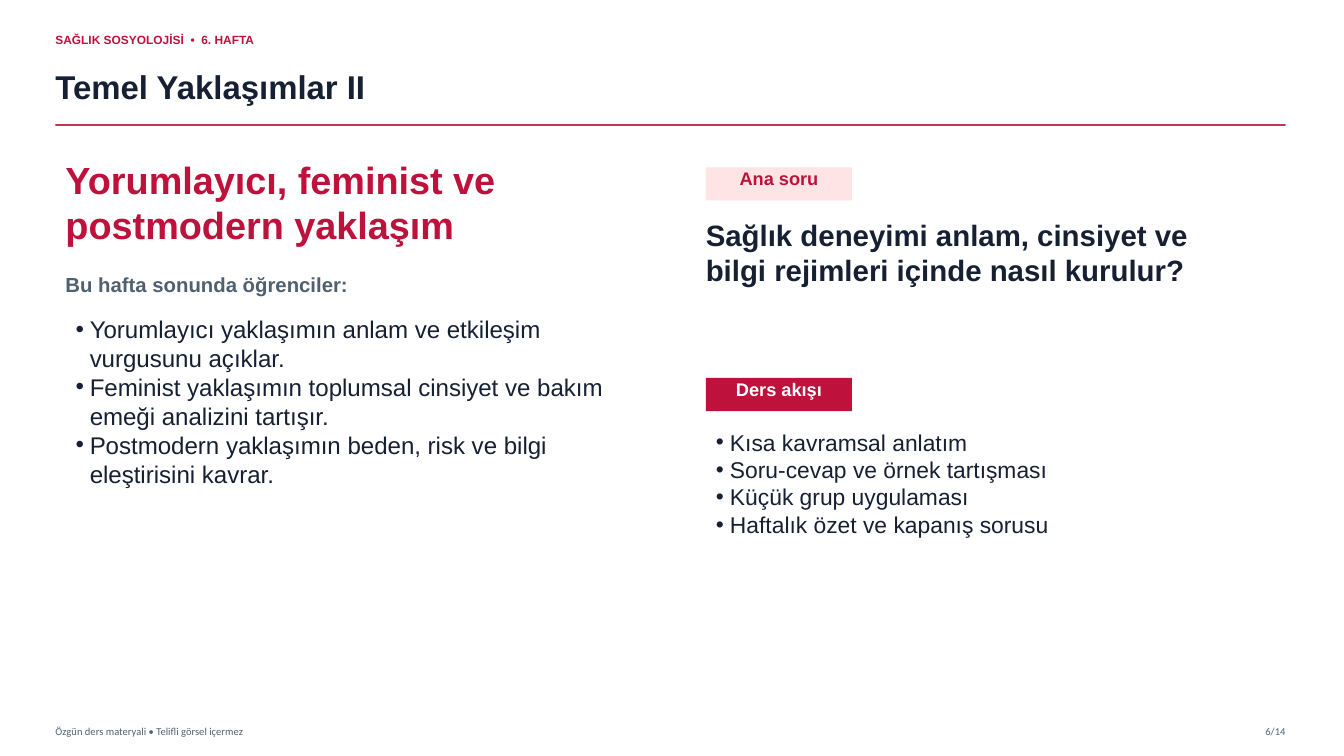
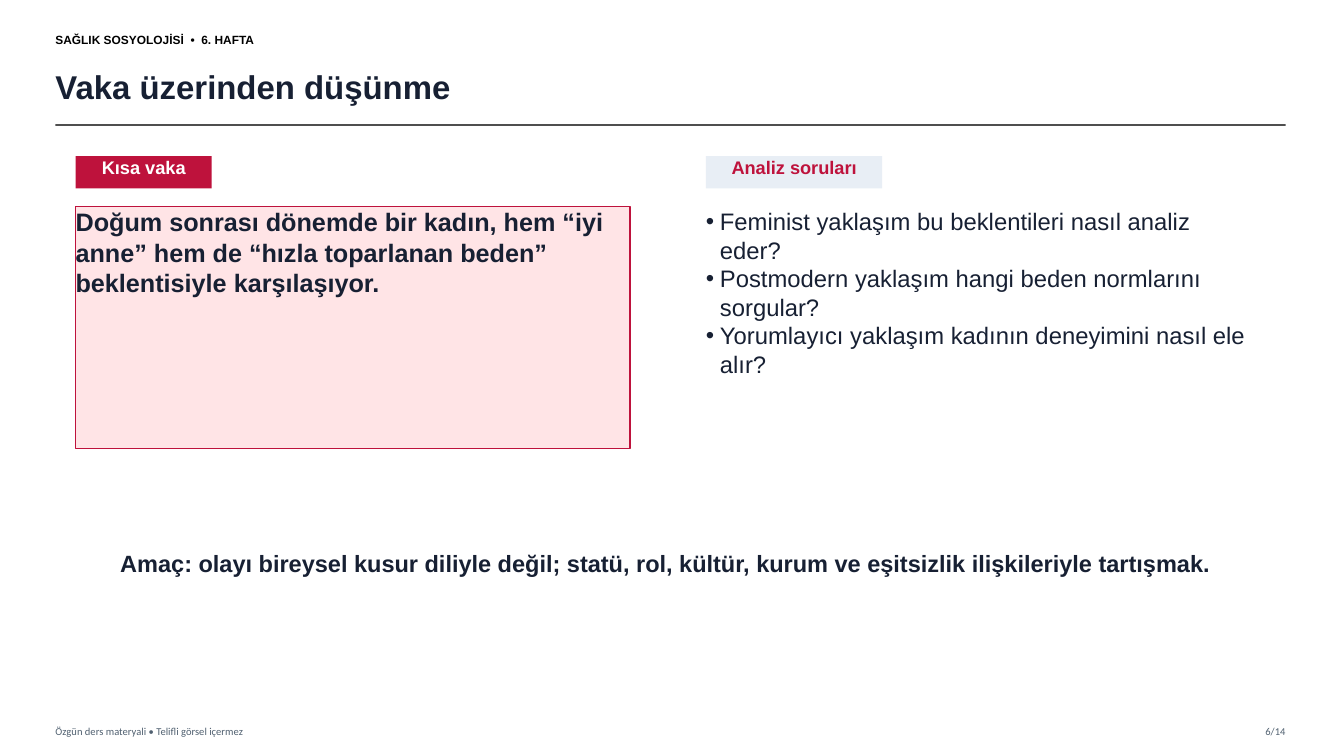
from dataclasses import dataclass

from lxml.etree import SubElement
from pptx import Presentation
from pptx.dml.color import RGBColor
from pptx.enum.shapes import MSO_CONNECTOR, MSO_SHAPE
from pptx.enum.text import MSO_ANCHOR, MSO_AUTO_SIZE, PP_ALIGN
from pptx.oxml.ns import qn
from pptx.util import Inches, Pt


@dataclass(frozen=True)
class Theme:
    # Colours
    ink: str = "172033"
    muted: str = "506070"
    accent: str = "BE123C"
    blush: str = "FFE4E6"
    mist: str = "E8EEF5"
    white: str = "FFFFFF"
    black: str = "000000"
    charcoal: str = "333333"
    # Fonts
    font: str = "Arial"
    footer_font: str = "Calibri"
    # Type sizes
    footer: float = 7.5
    eyebrow: float = 8.5
    tag: float = 13
    lead: float = 14.5
    flow: float = 16.3
    goal: float = 16.8
    questions: float = 17
    outcomes: float = 17.2
    case: float = 18
    key_question: float = 21
    title: float = 23.5
    topic: float = 27


THEME = Theme()
BULLET_INDENT = Inches(0.14)


@dataclass(frozen=True)
class Box:
    left: float
    top: float
    width: float
    height: float

    def inner(self, dx, dy, width, height):
        """Return a box placed from this box's top left corner."""
        return Box(self.left + dx, self.top + dy, width, height)

    def lengths(self):
        return [Inches(n) for n in (self.left, self.top, self.width, self.height)]


PAGE = Box(0, 0, 13.33, 7.5)


def color(value):
    return RGBColor.from_string(value)


def add_bullet(paragraph):
    properties = paragraph._p.get_or_add_pPr()
    properties.set("marL", str(BULLET_INDENT))
    properties.set("indent", str(-BULLET_INDENT))
    SubElement(properties, qn("a:buFont"), typeface=THEME.font)
    SubElement(properties, qn("a:buChar"), char="•")


def write(shape, lines, size, ink=THEME.ink, bold=False, align=PP_ALIGN.LEFT,
          anchor=MSO_ANCHOR.TOP, font=THEME.font, bullets=False):
    """Fill a shape with paragraphs of one style, without inner margins."""
    frame = shape.text_frame
    frame.text = "\n".join(lines)
    frame.word_wrap = True
    frame.auto_size = MSO_AUTO_SIZE.NONE
    frame.vertical_anchor = anchor
    frame.margin_left = frame.margin_right = 0
    frame.margin_top = frame.margin_bottom = 0
    for paragraph in frame.paragraphs:
        paragraph.alignment = align
        paragraph.space_before = Pt(0)
        if bullets:
            add_bullet(paragraph)
        for run in paragraph.runs:
            run.font.name = font
            run.font.size = Pt(size)
            run.font.bold = bold
            run.font.color.rgb = color(ink)


def add_text(slide, box, text, size, **style):
    write(slide.shapes.add_textbox(*box.lengths()), [text], size, **style)


def fill_placeholder(placeholder, box, lines, size, **style):
    placeholder.left, placeholder.top, placeholder.width, placeholder.height = box.lengths()
    write(placeholder, lines, size, **style)


def add_panel(slide, box, text, size, fill, outline=None, **style):
    panel = slide.shapes.add_shape(MSO_SHAPE.RECTANGLE, *box.lengths())
    panel.shadow.inherit = False
    panel.fill.solid()
    panel.fill.fore_color.rgb = color(fill)
    if outline:
        panel.line.color.rgb = color(outline)
        panel.line.width = Pt(1)
    else:
        panel.line.fill.background()
    write(panel, [text], size, bold=True, **style)


def add_tag(slide, box, text, fill, ink):
    add_panel(slide, box, text, THEME.tag, fill, ink=ink, align=PP_ALIGN.CENTER)


def add_header(slide, box, title, eyebrow_color, rule_color):
    add_text(slide, box.inner(0, 0, 3.6, 0.28), "SAĞLIK SOSYOLOJİSİ  •  6. HAFTA",
             THEME.eyebrow, ink=eyebrow_color, bold=True, anchor=MSO_ANCHOR.MIDDLE)
    fill_placeholder(slide.shapes.title, box.inner(0, 0.33, 11.95, 0.55), [title],
                     THEME.title, bold=True, anchor=MSO_ANCHOR.MIDDLE)
    # Rule along the bottom of the header
    bottom = box.top + box.height
    rule = slide.shapes.add_connector(
        MSO_CONNECTOR.STRAIGHT, Inches(box.left), Inches(bottom),
        Inches(box.left + box.width), Inches(bottom))
    rule.line.color.rgb = color(rule_color)
    rule.line.width = Pt(1.2)
    rgb = rule._element.spPr.find(".//" + qn("a:srgbClr"))
    SubElement(rgb, qn("a:alpha"), val="85000")
    SubElement(rule._element.spPr, qn("a:effectLst"))


def add_footer(slide, box):
    style = dict(ink=THEME.muted, font=THEME.footer_font, anchor=MSO_ANCHOR.MIDDLE)
    add_text(slide, box.inner(0, 0, 6, box.height),
             "Özgün ders materyali • Telifli görsel içermez", THEME.footer, **style)
    add_text(slide, box.inner(box.width - 0.65, 0, 0.65, box.height), "6/14",
             THEME.footer, align=PP_ALIGN.RIGHT, **style)


def start_slide(presentation, layout, title, eyebrow_color, rule_color):
    slide = presentation.slides.add_slide(presentation.slide_layouts.get_by_name(layout))
    add_header(slide, PAGE.inner(0.55, 0.25, 12.2, 0.99), title, eyebrow_color, rule_color)
    add_footer(slide, PAGE.inner(0.55, 7.14, 12.2, 0.22))
    return slide


def add_outcomes(slide, box):
    add_text(slide, box.inner(0, 0, 5.3, 0.95),
             "Yorumlayıcı, feminist ve postmodern yaklaşım",
             THEME.topic, ink=THEME.accent, bold=True)
    add_text(slide, box.inner(0, 1.15, 4.9, 0.3), "Bu hafta sonunda öğrenciler:",
             THEME.lead, ink=THEME.muted, bold=True)
    fill_placeholder(slide.placeholders[1], box.inner(0.1, 1.57, 5.5, 2), [
        "Yorumlayıcı yaklaşımın anlam ve etkileşim vurgusunu açıklar.",
        "Feminist yaklaşımın toplumsal cinsiyet ve bakım emeği analizini tartışır.",
        "Postmodern yaklaşımın beden, risk ve bilgi eleştirisini kavrar.",
    ], THEME.outcomes, bullets=True)


def add_question_and_flow(slide, box):
    # Main question
    add_tag(slide, box.inner(0, 0, 1.45, 0.33), "Ana soru", THEME.blush, THEME.accent)
    add_text(slide, box.inner(0, 0.49, 5.35, 1.1),
             "Sağlık deneyimi anlam, cinsiyet ve bilgi rejimleri içinde nasıl kurulur?",
             THEME.key_question, bold=True)
    # Lesson flow
    add_tag(slide, box.inner(0, 2.09, 1.45, 0.33), "Ders akışı", THEME.accent, THEME.white)
    fill_placeholder(slide.placeholders[2], box.inner(0.1, 2.59, 5.35, 1.55), [
        "Kısa kavramsal anlatım",
        "Soru-cevap ve örnek tartışması",
        "Küçük grup uygulaması",
        "Haftalık özet ve kapanış sorusu",
    ], THEME.flow, bullets=True)


def add_case(slide, box):
    add_tag(slide, box.inner(0, 0, 1.35, 0.32), "Kısa vaka", THEME.accent, THEME.white)
    add_panel(slide, box.inner(0, 0.5, box.width, box.height - 0.5),
              "Doğum sonrası dönemde bir kadın, hem “iyi anne” hem de “hızla toparlanan "
              "beden” beklentisiyle karşılaşıyor.",
              THEME.case, THEME.blush, outline=THEME.accent)


def add_analysis(slide, box):
    add_tag(slide, box.inner(0, 0, 1.75, 0.32), "Analiz soruları", THEME.mist, THEME.accent)
    fill_placeholder(slide.placeholders[1], box.inner(0, 0.5, box.width, box.height - 0.5), [
        "Feminist yaklaşım bu beklentileri nasıl analiz eder?",
        "Postmodern yaklaşım hangi beden normlarını sorgular?",
        "Yorumlayıcı yaklaşım kadının deneyimini nasıl ele alır?",
    ], THEME.questions, bullets=True)


def build_overview_slide(presentation):
    slide = start_slide(presentation, "Two Content", "Temel Yaklaşımlar II",
                        THEME.accent, THEME.accent)
    add_outcomes(slide, PAGE.inner(0.65, 1.55, 5.6, 3.57))
    add_question_and_flow(slide, PAGE.inner(7, 1.66, 5.45, 4.14))


def build_case_slide(presentation):
    slide = start_slide(presentation, "Title and Content", "Vaka üzerinden düşünme",
                        THEME.black, THEME.charcoal)
    add_case(slide, PAGE.inner(0.75, 1.55, 5.5, 2.9))
    add_analysis(slide, PAGE.inner(7, 1.55, 5.4, 3.15))
    # Goal of the discussion
    add_text(slide, PAGE.inner(1.05, 5.45, 11.1, 0.6),
             "Amaç: olayı bireysel kusur diliyle değil; statü, rol, kültür, kurum ve "
             "eşitsizlik ilişkileriyle tartışmak.",
             THEME.goal, bold=True, align=PP_ALIGN.CENTER)


def main():
    presentation = Presentation()
    presentation.slide_width = Inches(PAGE.width)
    presentation.slide_height = Inches(PAGE.height)
    build_overview_slide(presentation)
    build_case_slide(presentation)
    presentation.save("out.pptx")


if __name__ == "__main__":
    main()
